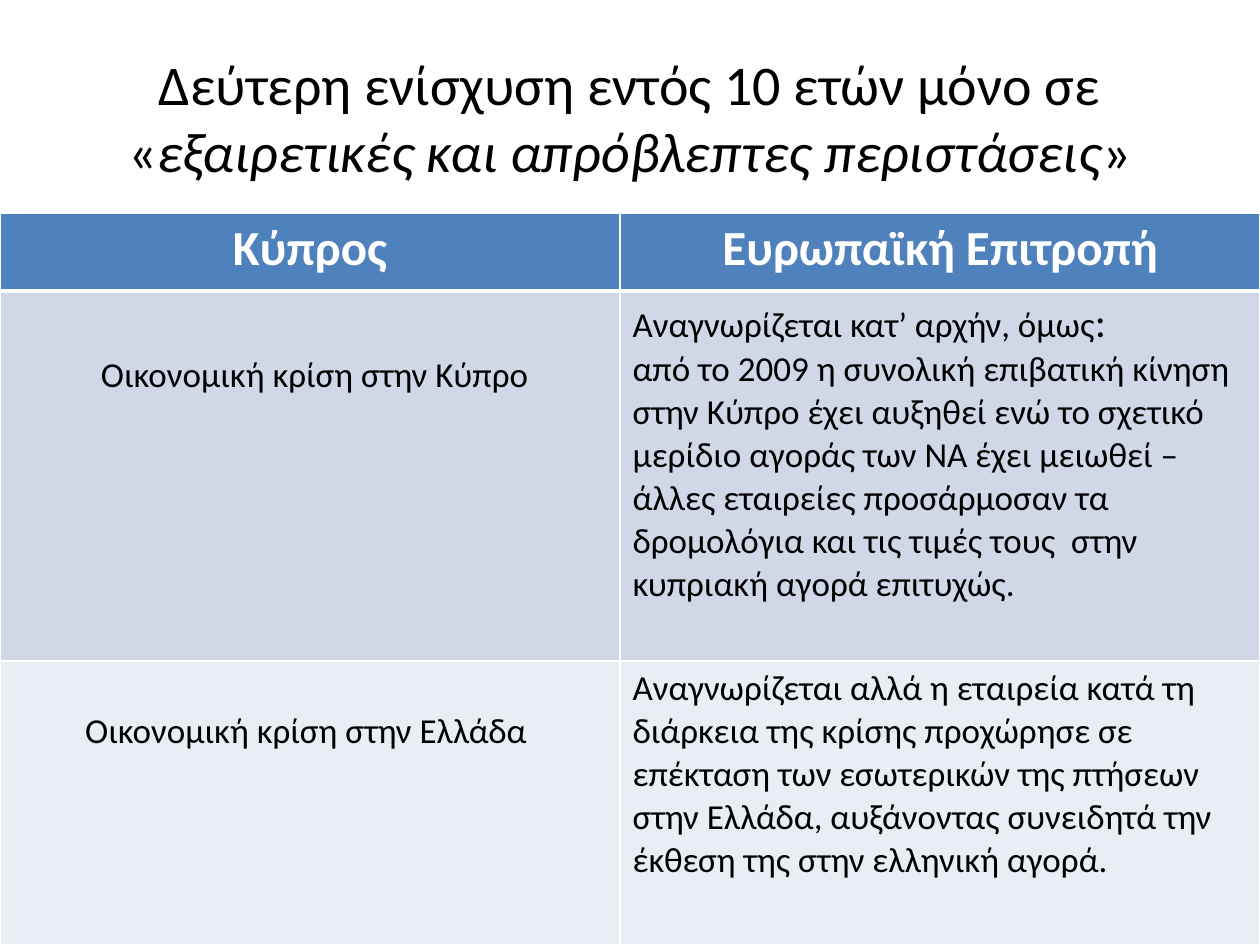
import lxml.etree
import pptx
import pptx.dml.color
import pptx.enum.text
import pptx.oxml
import pptx.oxml.ns
import pptx.util

PX = 914400 // 126  # EMU in one px
THEME = {
    "font": "Calibri",
    "black": "000000", "white": "FFFFFF",
    "header": "4F81BD", "bands": ["D0D8E8", "E9EDF4"],
    "title_size": 32, "header_size": 28, "large_size": 24, "body_size": 20,
    "border": 1, "header_border": 3,
}
ALIGN = pptx.enum.text.PP_ALIGN


def add_text(paragraph, text, size=THEME["body_size"], color=THEME["black"],
             bold=False, italic=False, align=ALIGN.LEFT):
    paragraph.alignment = align
    run = paragraph.add_run()
    run.text = text
    run.font.name = THEME["font"]
    run.font.size = pptx.util.Pt(size)
    run.font.bold = bold
    run.font.italic = italic
    run.font.color.rgb = pptx.dml.color.RGBColor.from_string(color)


def style_cell(cell, fill, top, bottom):
    cell.fill.solid()
    cell.fill.fore_color.rgb = pptx.dml.color.RGBColor.from_string(fill)
    properties = cell._tc.get_or_add_tcPr()
    widths = {"lnL": THEME["border"], "lnR": THEME["border"], "lnT": top, "lnB": bottom}
    for position, (side, width) in enumerate(widths.items()):
        line = pptx.oxml.parse_xml(
            f'<a:{side} {pptx.oxml.ns.nsdecls("a")} w="{pptx.util.Pt(width)}">'
            f'<a:solidFill><a:srgbClr val="{THEME["white"]}"/></a:solidFill></a:{side}>')
        properties.insert(position, line)


presentation = pptx.Presentation()
presentation.slide_width = pptx.util.Inches(10)
presentation.slide_height = pptx.util.Inches(7.5)
slide = presentation.slides.add_slide(presentation.slide_layouts[6])

# Title
title = slide.shapes.add_textbox(63 * PX, 38 * PX, 1134 * PX, 157 * PX)
title.text_frame.word_wrap = True
title.text_frame.vertical_anchor = pptx.enum.text.MSO_ANCHOR.MIDDLE
for text, italic in [("Δεύτερη ενίσχυση εντός 10 ετών μόνο σε «", False),
                     ("εξαιρετικές και απρόβλεπτες περιστάσεις", True),
                     ("»", False)]:
    add_text(title.text_frame.paragraphs[0], text, size=THEME["title_size"],
             italic=italic, align=ALIGN.CENTER)

# Table grid
column_widths = [620, 640]
row_heights = [78, 370, 284]
table = slide.shapes.add_table(
    len(row_heights), len(column_widths), 0, 213 * PX,
    sum(column_widths) * PX, sum(row_heights) * PX).table
for column, width in zip(table.columns, column_widths):
    column.width = width * PX
for row, height in zip(table.rows, row_heights):
    row.height = height * PX

# Header row
for cell, heading in zip(table.rows[0].cells, ["Κύπρος", "Ευρωπαϊκή Επιτροπή"]):
    style_cell(cell, THEME["header"], THEME["border"], THEME["header_border"])
    add_text(cell.text_frame.paragraphs[0], heading, size=THEME["header_size"],
             color=THEME["white"], bold=True, align=ALIGN.CENTER)

# Body rows: fills and borders
top_borders = [THEME["header_border"], THEME["border"]]
for row_index, (fill, top) in enumerate(zip(THEME["bands"], top_borders), start=1):
    for cell in table.rows[row_index].cells:
        style_cell(cell, fill, top, THEME["border"])

# Arguments of Cyprus, lowered by one line within the cell
cyprus_crisis, greek_crisis = table.cell(1, 0), table.cell(2, 0)
cyprus_crisis.margin_top = 57 * PX
greek_crisis.margin_top = 49 * PX
paragraph = cyprus_crisis.text_frame.paragraphs[0]
add_text(paragraph, " ", size=THEME["large_size"], align=ALIGN.CENTER)
add_text(paragraph, "Οικονομική κρίση στην Κύπρο", align=ALIGN.CENTER)
add_text(greek_crisis.text_frame.paragraphs[0], "Οικονομική κρίση στην Ελλάδα ",
         align=ALIGN.CENTER)

# Answers of the Commission
answer = table.cell(1, 1).text_frame
add_text(answer.paragraphs[0], "Αναγνωρίζεται κατ’ αρχήν, όμως")
add_text(answer.paragraphs[0], ":", size=THEME["large_size"])
add_text(answer.add_paragraph(),
         "από το 2009 η συνολική επιβατική κίνηση στην Κύπρο έχει αυξηθεί ενώ το "
         "σχετικό μερίδιο αγοράς των ΝΑ έχει μειωθεί – άλλες εταιρείες προσάρμοσαν "
         "τα δρομολόγια και τις τιμές τους  στην κυπριακή αγορά επιτυχώς.")
add_text(table.cell(2, 1).text_frame.paragraphs[0],
         "Αναγνωρίζεται αλλά η εταιρεία κατά τη διάρκεια της κρίσης προχώρησε σε "
         "επέκταση των εσωτερικών της πτήσεων στην Ελλάδα, αυξάνοντας συνειδητά "
         "την έκθεση της στην ελληνική αγορά.")

presentation.save("out.pptx")
